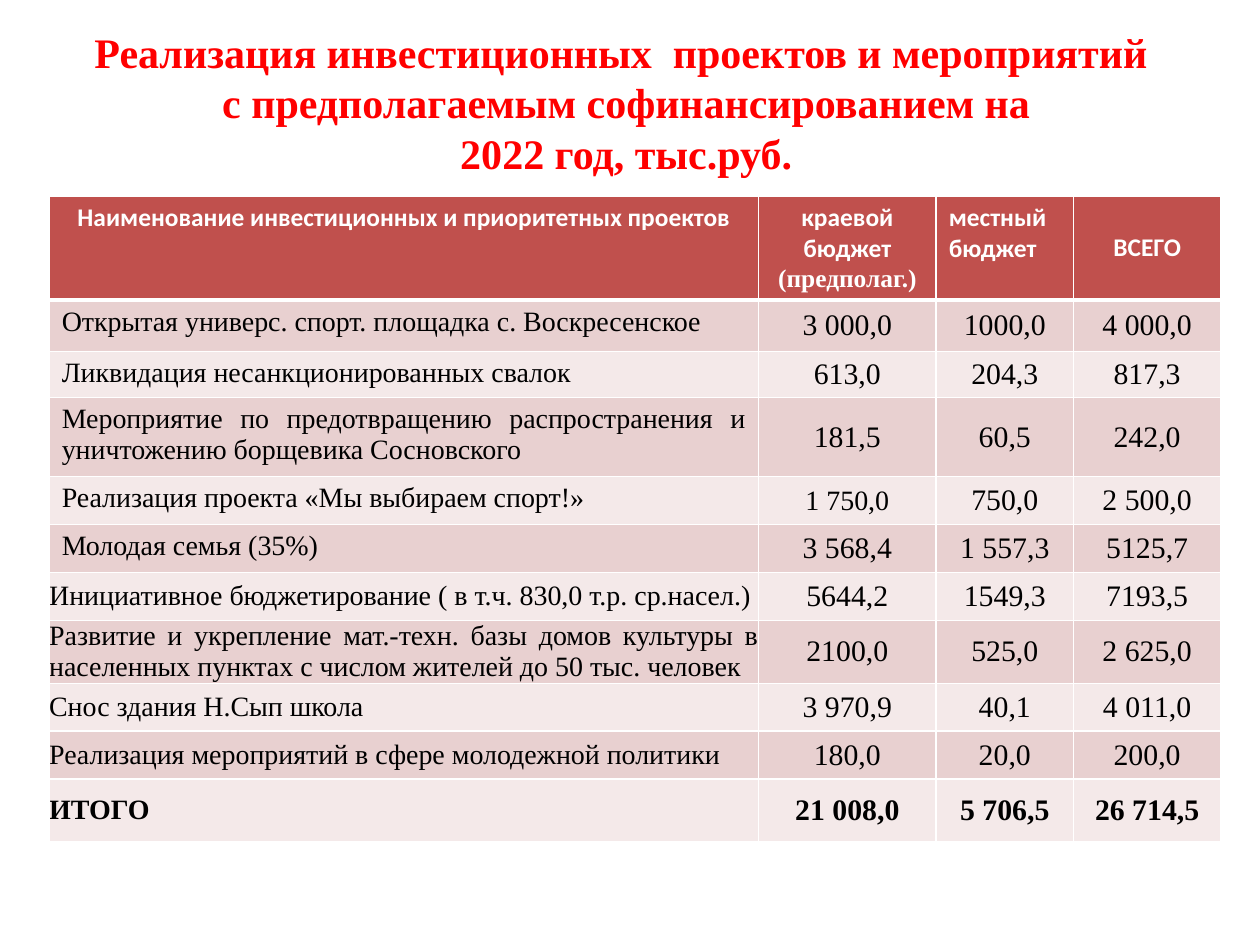
from pptx import Presentation
from pptx.dml.color import RGBColor
from pptx.enum.text import MSO_ANCHOR, MSO_AUTO_SIZE, PP_ALIGN
from pptx.oxml import parse_xml
from pptx.oxml.ns import nsdecls
from pptx.util import Inches, Pt

COLORS = {"title": "FF0000", "header": "C0504D", "odd": "E8D0D0",
          "even": "F4E9E9", "white": "FFFFFF", "text": "000000"}
SERIF, SANS = "Times New Roman", "Calibri"

TITLE = ["Реализация инвестиционных  проектов и мероприятий ",
         "с предполагаемым софинансированием на",
         " 2022 год, тыс.руб. "]
HEADER = ["Наименование инвестиционных и приоритетных проектов",
          "краевой бюджет\n(предполаг.)", "местный бюджет", "ВСЕГО"]
PROJECTS = [
    ("Открытая универс. спорт. площадка с. Воскресенское", "3 000,0", "1000,0", "4 000,0"),
    ("Ликвидация несанкционированных свалок", "613,0", "204,3", "817,3"),
    ("Мероприятие по предотвращению распространения и уничтожению борщевика Сосновского",
     "181,5", "60,5", "242,0"),
    ("Реализация проекта «Мы выбираем спорт!»", "1 750,0", "750,0", "2 500,0"),
    ("Молодая семья (35%)", "3 568,4", "1 557,3", "5125,7"),
    ("Инициативное бюджетирование ( в т.ч. 830,0 т.р. ср.насел.)",
     "5644,2", "1549,3", "7193,5"),
    ("Развитие и укрепление мат.-техн. базы домов культуры в населенных пунктах "
     "с числом жителей до 50 тыс. человек", "2100,0", "525,0", "2 625,0"),
    ("Снос здания Н.Сып школа", "3 970,9", "40,1", "4 011,0"),
    ("Реализация мероприятий в сфере молодежной политики", "180,0", "20,0", "200,0"),
    ("ИТОГО", "21 008,0", "5 706,5", "26 714,5"),
]
COL_WIDTHS = [5.63, 1.41, 1.09, 1.17]
ROW_HEIGHTS = [0.82, 0.41, 0.32, 0.63, 0.38, 0.38, 0.38, 0.5, 0.38, 0.38, 0.5]
FIRST_FLUSH_ROW = 6  # from here on, project names have no cell margins
SMALLER_VALUE = (4, 1)  # the one figure set at the size of the names


class Deck:
    def __init__(self):
        self.prs = Presentation()
        self.prs.slide_width, self.prs.slide_height = Inches(10), Inches(7.5)
        self.s = self.prs.slides.add_slide(self.prs.slide_layouts[5])

    def style(self, p, size, color, font=SERIF, bold=False, align=PP_ALIGN.CENTER):
        p.alignment = align
        p.font.size, p.font.name, p.font.bold = Pt(size), font, bold
        p.font.color.rgb = RGBColor.from_string(COLORS[color])

    def title(self, lines, left, top, width, height):
        sp = self.s.shapes.title
        sp.left, sp.top, sp.width, sp.height = map(Inches, (left, top, width, height))
        tf = sp.text_frame
        tf.auto_size, tf.word_wrap = MSO_AUTO_SIZE.NONE, True
        tf.vertical_anchor = MSO_ANCHOR.BOTTOM
        tf.margin_left = tf.margin_right = tf.margin_bottom = 0
        tf.margin_top = Inches(0.05)
        tf.text = "\n".join(lines)
        for p in tf.paragraphs:
            self.style(p, 24, "title", bold=True)

    def borders(self, cell, bottom):
        """Draw white cell edges, 1 pt except for the bottom one."""
        tcPr = cell._tc.get_or_add_tcPr()
        widths = {"lnL": 1, "lnR": 1, "lnT": 1, "lnB": bottom}
        for i, (tag, width) in enumerate(widths.items()):
            tcPr.insert(i, parse_xml(
                f'<a:{tag} {nsdecls("a")} w="{Pt(width)}"><a:solidFill>'
                f'<a:srgbClr val="{COLORS["white"]}"/></a:solidFill></a:{tag}>'))

    def cell(self, cell, text, fill, middle, bottom=1):
        cell.text = text
        cell.fill.solid()
        cell.fill.fore_color.rgb = RGBColor.from_string(COLORS[fill])
        cell.vertical_anchor = MSO_ANCHOR.MIDDLE if middle else MSO_ANCHOR.TOP
        self.borders(cell, bottom)
        return cell.text_frame.paragraphs

    def header_row(self, table, labels):
        for c, label in enumerate(labels):
            align = PP_ALIGN.LEFT if c == 2 else PP_ALIGN.CENTER
            ps = self.cell(table.cell(0, c), label, "header", c == 3, bottom=3)
            for p, font in zip(ps, (SANS, SERIF)):
                self.style(p, 14.5, "white", font, True, align)

    def project_row(self, table, r, values, total):
        fill = "odd" if r % 2 else "even"
        for c, value in enumerate(values):
            cell, name = table.cell(r, c), c == 0
            flush = name and r >= FIRST_FLUSH_ROW
            p = self.cell(cell, value, fill, flush or not name)[0]
            if flush:
                cell.margin_left = cell.margin_right = 0
                cell.margin_top = cell.margin_bottom = 0
            size = 16 if name or (r, c) == SMALLER_VALUE else 17
            align = PP_ALIGN.JUSTIFY if name else PP_ALIGN.CENTER
            self.style(p, size, "text", bold=total, align=align)

    def table(self, header, rows, left, top):
        table = self.s.shapes.add_table(
            len(rows) + 1, len(header), Inches(left), Inches(top),
            Inches(sum(COL_WIDTHS)), Inches(sum(ROW_HEIGHTS))).table
        for column, width in zip(table.columns, COL_WIDTHS):
            column.width = Inches(width)
        for row, height in zip(table.rows, ROW_HEIGHTS):
            row.height = Inches(height)
        self.header_row(table, header)
        for r, values in enumerate(rows, 1):
            self.project_row(table, r, values, total=r == len(rows))


def main():
    deck = Deck()
    deck.title(TITLE, 0.47, 0.55, 9, 0.86)
    deck.table(HEADER, PROJECTS, 0.39, 1.56)
    deck.prs.save("out.pptx")


if __name__ == "__main__":
    main()
